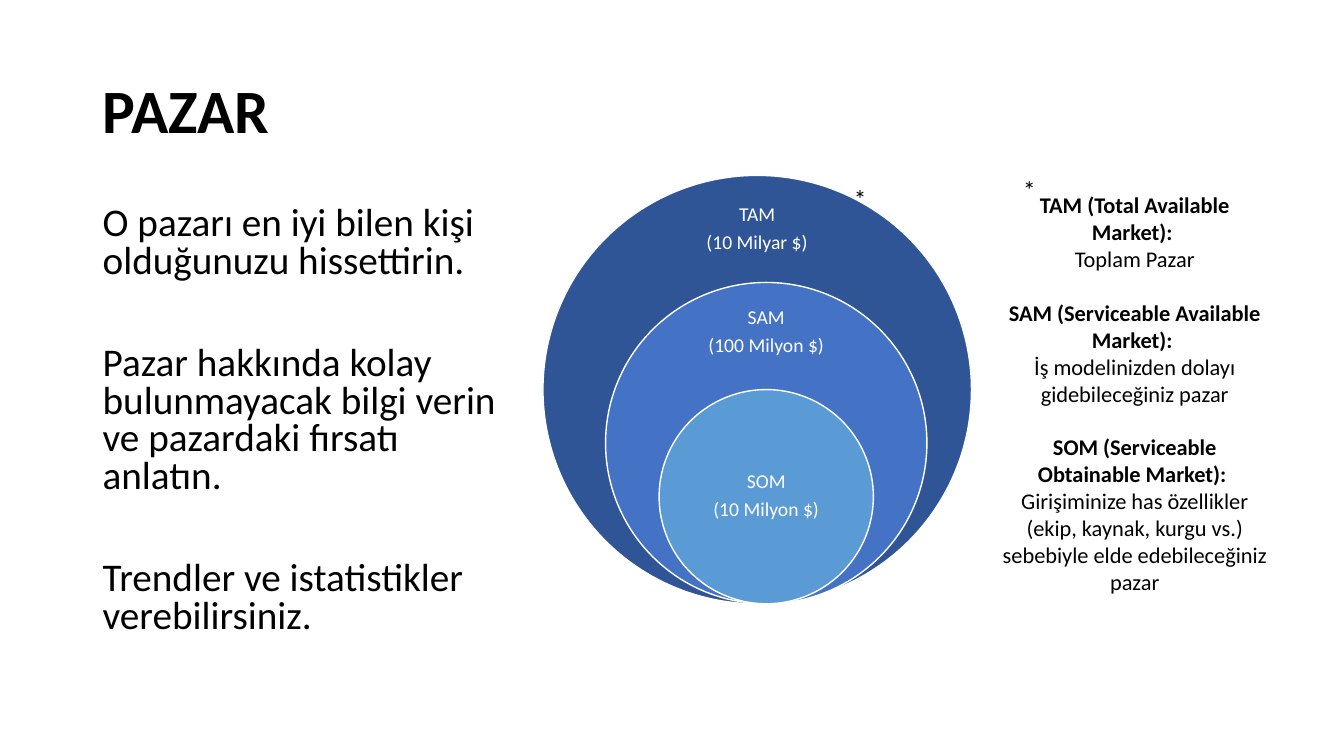
import pptx
import pptx.dml.color
import pptx.enum.shapes
import pptx.enum.text
import pptx.util

Inches = pptx.util.Inches
Pt = pptx.util.Pt
Align = pptx.enum.text.PP_ALIGN
Anchor = pptx.enum.text.MSO_ANCHOR

ADVICE = [
    "O pazarı en iyi bilen kişi olduğunuzu hissettirin.",
    "Pazar hakkında kolay bulunmayacak bilgi verin ve pazardaki fırsatı anlatın.",
    "Trendler ve istatistikler verebilirsiniz.",
]
MARKETS = [
    ("TAM", "(10 Milyar $)", "2F5597", 1.0, 7.51, 2.27),
    ("SAM", "(100 Milyon $)", "4472C4", 0.75, 7.6, 3.3),
    ("SOM", "(10 Milyon $)", "5B9BD5", 0.5, 7.6, 4.92),
]
DEFINITIONS = [
    ("TAM (Total Available Market): ", "Toplam Pazar"),
    ("SAM (Serviceable Available Market): ",
     "İş modelinizden dolayı gidebileceğiniz pazar"),
    ("SOM (Serviceable Obtainable Market): ",
     "Girişiminize has özellikler (ekip, kaynak, kurgu vs.) "
     "sebebiyle elde edebileceğiniz pazar"),
]


def color(value):
    return pptx.dml.color.RGBColor.from_string(value)


def add_frame(page, left, top, width, height, anchor=Anchor.TOP, wrap=True):
    box = page.shapes.add_textbox(
        Inches(left), Inches(top), Inches(width), Inches(height))
    frame = box.text_frame
    frame.word_wrap = wrap
    frame.vertical_anchor = anchor
    return frame


def write(frame, index, text, size, fill="000000", bold=False, align=Align.LEFT,
          spacing=1.0, before=0, after=0):
    para = frame.paragraphs[0] if index == 0 else frame.add_paragraph()
    para.text = text
    para.alignment = align
    para.line_spacing = spacing
    para.space_before = Pt(before)
    para.space_after = Pt(after)
    para.font.name = "Calibri"
    para.font.size = Pt(size)
    para.font.bold = bold
    para.font.color.rgb = color(fill)


def add_title(page, left, top, width, height):
    frame = add_frame(page, left, top, width, height, Anchor.MIDDLE)
    write(frame, 0, "PAZAR", 44, bold=True, spacing=0.9)


def add_advice(page, left, top, width, height):
    frame = add_frame(page, left, top, width, height)
    for index, text in enumerate(ADVICE):
        write(frame, index, text, 28, spacing=0.8, before=46 if index else 0)


def add_market_circles(page, top, diameter):
    bottom = top + diameter
    for name, amount, fill, share, center, label_middle in MARKETS:
        size = diameter * share
        circle = page.shapes.add_shape(
            pptx.enum.shapes.MSO_SHAPE.OVAL, Inches(center - size / 2),
            Inches(bottom - size), Inches(size), Inches(size))
        circle.shadow.inherit = False
        circle.fill.solid()
        circle.fill.fore_color.rgb = color(fill)
        circle.line.color.rgb = color("FFFFFF")
        circle.line.width = Pt(1)
        frame = add_frame(
            page, center - 0.75, label_middle - 0.32, 1.5, 0.64, Anchor.MIDDLE)
        for index, text in enumerate((name, amount)):
            write(frame, index, text, 14, "FFFFFF", align=Align.CENTER,
                  spacing=0.9, after=4.9)


def add_definitions(page, left, top, width, height):
    frame = add_frame(page, left, top, width, height)
    for index, (term, meaning) in enumerate(DEFINITIONS):
        write(frame, 2 * index, term, 16, bold=True, align=Align.CENTER,
              before=19.3 if index else 0)
        write(frame, 2 * index + 1, meaning, 16, align=Align.CENTER)


def add_asterisk(page, left, top):
    frame = add_frame(page, left, top, 0.33, 0.4, wrap=False)
    write(frame, 0, "*", 18)


def main():
    deck = pptx.Presentation()
    deck.slide_width = Inches(13.33)
    deck.slide_height = Inches(7.5)
    page = deck.slides.add_slide(deck.slide_layouts[6])
    add_title(page, 0.92, 0.4, 11.5, 1.45)
    add_advice(page, 0.92, 2, 4.22, 4.76)
    add_market_circles(page, 1.74, 4.25)
    add_definitions(page, 9.82, 1.85, 2.87, 4.14)
    add_asterisk(page, 8.37, 1.77)
    add_asterisk(page, 10.05, 1.68)
    deck.save("out.pptx")


if __name__ == "__main__":
    main()
